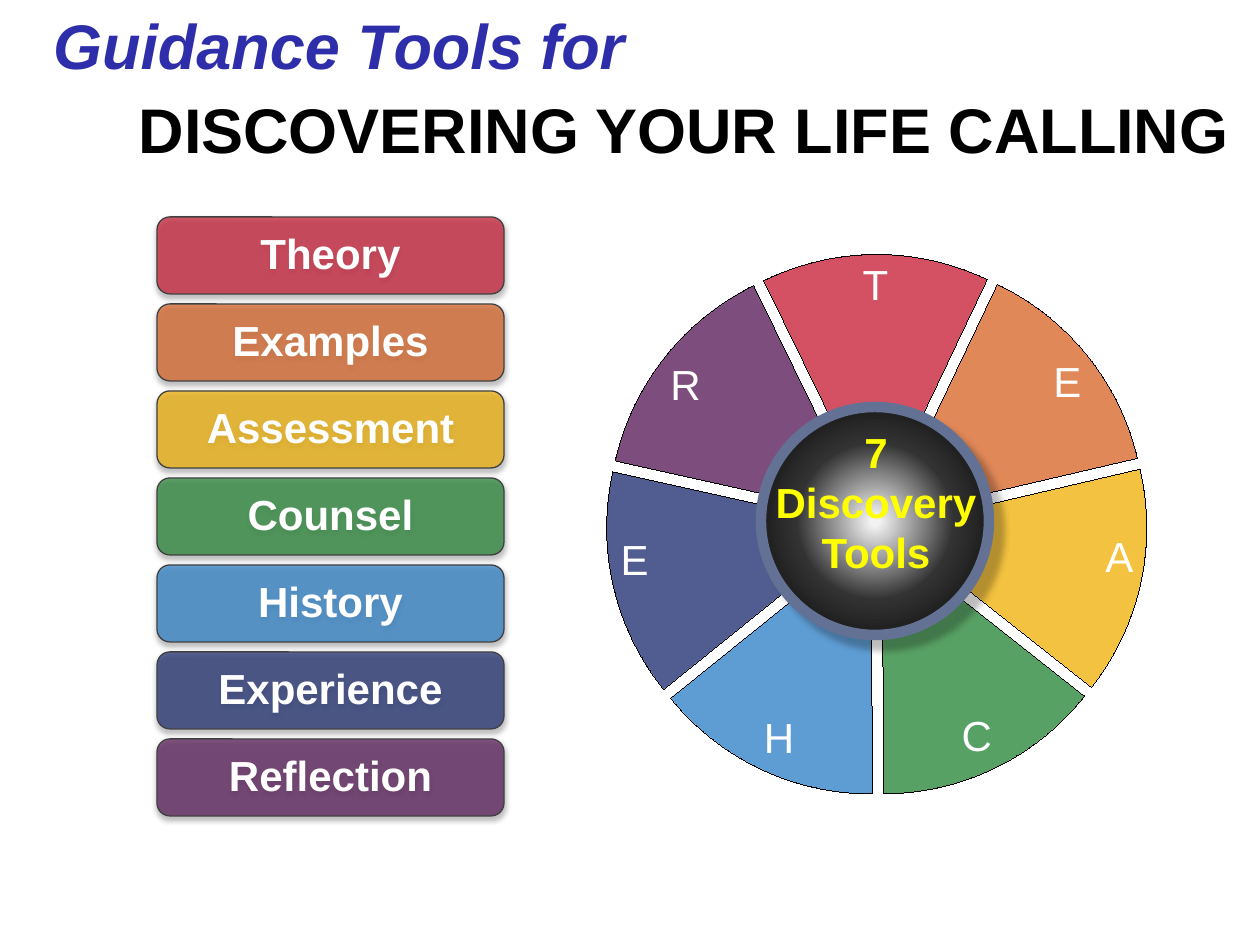
from lxml import etree
from pptx import Presentation
from pptx.chart.data import CategoryChartData
from pptx.dml.color import RGBColor
from pptx.enum.chart import XL_CHART_TYPE, XL_LABEL_POSITION
from pptx.enum.shapes import MSO_SHAPE
from pptx.enum.text import MSO_ANCHOR, PP_ALIGN
from pptx.oxml.ns import qn
from pptx.util import Pt

PIE = XL_CHART_TYPE.PIE
INSIDE_END = XL_LABEL_POSITION.INSIDE_END
ROUNDED, OVAL = MSO_SHAPE.ROUNDED_RECTANGLE, MSO_SHAPE.OVAL
CENTER, MIDDLE, TOP = PP_ALIGN.CENTER, MSO_ANCHOR.MIDDLE, MSO_ANCHOR.TOP
A_NS = "http://schemas.openxmlformats.org/drawingml/2006/main"
C_NS = "http://schemas.openxmlformats.org/drawingml/2006/chart"
PX = 914400 / 126

THEME = {
    "button": {"name": "Arial", "size": Pt(24), "bold": True, "color": "FFFFFF"},
    "slice": {"name": "Arial", "size": Pt(24), "bold": False, "color": "FFFFFF"},
    "hub": {"name": "Arial", "size": Pt(24), "bold": True, "color": "FFFF00"},
    "title": {"name": "Arial", "size": Pt(36), "bold": True, "color": "000000"},
    "lead": {"name": "Arial", "size": Pt(36), "bold": True, "italic": True, "color": "2E2EAA"},
    "button_line": "404040",
    "hub_line": "637194",
    "slice_line": "000000",
    "hub_gradient": [(3, "F2F2F2"), (49, "323232"), (100, "000000")],
    "lead_gradient": [(0, "8080DA"), (75, "2E2EAA"), (100, "000097")],
}
TOOLS = [
    ("Theory", "P", "C61831"),
    ("Examples", "C", "D66121"),
    ("Assessment", "R", "EFAE00"),
    ("Counsel", "H", "218231"),
    ("History", "G", "297DC6"),
    ("Experience", "M", "18286B"),
    ("Reflection", "E", "521452"),
]


def px(*lengths):
    return [round(length * PX) for length in lengths]


def write(frame, lines, style):
    frame.text = "\n".join(lines)
    for paragraph in frame.paragraphs:
        paragraph.alignment = CENTER
        for run in paragraph.runs:
            for key, value in style.items():
                if key == "color":
                    run.font.color.rgb = RGBColor.from_string(value)
                else:
                    setattr(run.font, key, value)


prs = Presentation()
prs.slide_width, prs.slide_height = px(1260, 945)
slide = prs.slides.add_slide(prs.slide_layouts[6])
shapes = slide.shapes

shadowed = []
for row, (tool, category, color) in enumerate(TOOLS):
    button = shapes.add_shape(ROUNDED, *px(157, 217 + 87 * row, 347, 77))
    button.fill.solid()
    button.fill.fore_color.rgb = RGBColor.from_string(color)
    fill_color = next(button.element.spPr.iter(qn("a:srgbClr")))
    etree.SubElement(fill_color, qn("a:alpha"), val="70000")
    button.line.color.rgb = RGBColor.from_string(THEME["button_line"])
    button.line.width = Pt(0.75)
    button.text_frame.vertical_anchor = MIDDLE
    write(button.text_frame, [tool], THEME["button"])
    button.text_frame.paragraphs[0].line_spacing = 0.9
    shadowed.append((button, 35, 3.1, 1.8, 90))

wheel_data = CategoryChartData()
wheel_data.categories = [category for tool, category, color in TOOLS]
wheel_data.add_series("Series 1", [14] * len(TOOLS))
wheel = shapes.add_chart(PIE, *px(336, 210, 1040, 630), wheel_data).chart
wheel.has_legend = False
wheel.has_title = False
wheel.font.name = "Arial"
wheel.font.size = Pt(10)
wheel.plots[0].vary_by_categories = True
slices = wheel.plots[0].series[0]
for index, (tool, category, color) in enumerate(TOOLS):
    point = slices.points[index]
    point.format.fill.solid()
    point.format.fill.fore_color.rgb = RGBColor.from_string(color)
    point.format.line.color.rgb = RGBColor.from_string(THEME["slice_line"])
    point.format.line.width = Pt(0)
    write(point.data_label.text_frame, [tool[0]], THEME["slice"])
    point.data_label.position = INSIDE_END

series_xml = slices._element
for slice_xml in series_xml.findall(qn("c:dPt")):
    fill_color = next(slice_xml.iter(qn("a:srgbClr")))
    etree.SubElement(fill_color, qn("a:alpha"), val="75000")
explosion = etree.Element(qn("c:explosion"), val="5")
series_xml.find(qn("c:dPt")).addprevious(explosion)
pie_xml = series_xml.getparent()
for old_angle in pie_xml.findall(qn("c:firstSliceAng")):
    pie_xml.remove(old_angle)
etree.SubElement(pie_xml, qn("c:firstSliceAng"), val="334")

plot_area = pie_xml.getparent()
for old_layout in plot_area.findall(qn("c:layout")):
    plot_area.remove(old_layout)
layout = etree.Element(qn("c:layout"))
manual = etree.SubElement(layout, qn("c:manualLayout"))
for tag, value in {
    "layoutTarget": "inner", "xMode": "edge", "yMode": "edge",
    "x": "0.26", "y": "0.07", "w": "0.52", "h": "0.86",
}.items():
    etree.SubElement(manual, f"{{{C_NS}}}{tag}", val=value)
plot_area.insert(0, layout)

gradients = {}
for name, direction in {
    "hub_gradient": '<a:path path="circle"><a:fillToRect l="50000" t="50000" r="50000" b="50000"/></a:path>',
    "lead_gradient": '<a:lin ang="5400000" scaled="0"/>',
}.items():
    stops = "".join(
        f'<a:gs pos="{position * 1000}"><a:srgbClr val="{color}"/></a:gs>'
        for position, color in THEME[name]
    )
    gradients[name] = etree.fromstring(
        f'<a:gradFill xmlns:a="{A_NS}"><a:gsLst>{stops}</a:gsLst>{direction}</a:gradFill>'
    )

hub = shapes.add_shape(OVAL, *px(761, 407, 228, 228))
hub.fill.solid()
hub_fill = hub.element.spPr.find(qn("a:solidFill"))
hub_fill.getparent().replace(hub_fill, gradients["hub_gradient"])
hub.line.color.rgb = RGBColor.from_string(THEME["hub_line"])
hub.line.width = Pt(6)
shadowed.append((hub, 25, 4, 8, 45))

for shape, opacity, blur, distance, angle in shadowed:
    shape.shadow.inherit = False
    shape.element.spPr.find(qn("a:effectLst")).append(etree.fromstring(
        f'<a:outerShdw xmlns:a="{A_NS}" blurRad="{Pt(blur)}" dist="{Pt(distance)}" '
        f'dir="{angle * 60000}" algn="ctr" rotWithShape="0"><a:srgbClr val="000000">'
        f'<a:alpha val="{opacity * 1000}"/></a:srgbClr></a:outerShdw>'
    ))

captions = {}
for style, box, wrap, lines in [
    ("hub", (745, 420, 262, 165), True, ["7", "Discovery", "Tools"]),
    ("title", (121, 84, 1126, 90), False, ["DISCOVERING YOUR LIFE CALLING"]),
    ("lead", (38, 0, 602, 90), False, ["Guidance Tools for"]),
]:
    caption = shapes.add_textbox(*px(*box)).text_frame
    caption.word_wrap = wrap
    caption.vertical_anchor = TOP
    write(caption, lines, THEME[style])
    captions[style] = caption.paragraphs[0].runs[0]._r.rPr

outline = etree.fromstring(
    f'<a:ln xmlns:a="{A_NS}" w="{Pt(0.71)}"><a:solidFill>'
    f'<a:srgbClr val="{THEME["title"]["color"]}"/></a:solidFill></a:ln>'
)
captions["title"].insert(0, outline)
lead_fill = captions["lead"].find(qn("a:solidFill"))
captions["lead"].replace(lead_fill, gradients["lead_gradient"])

prs.save("out.pptx")
